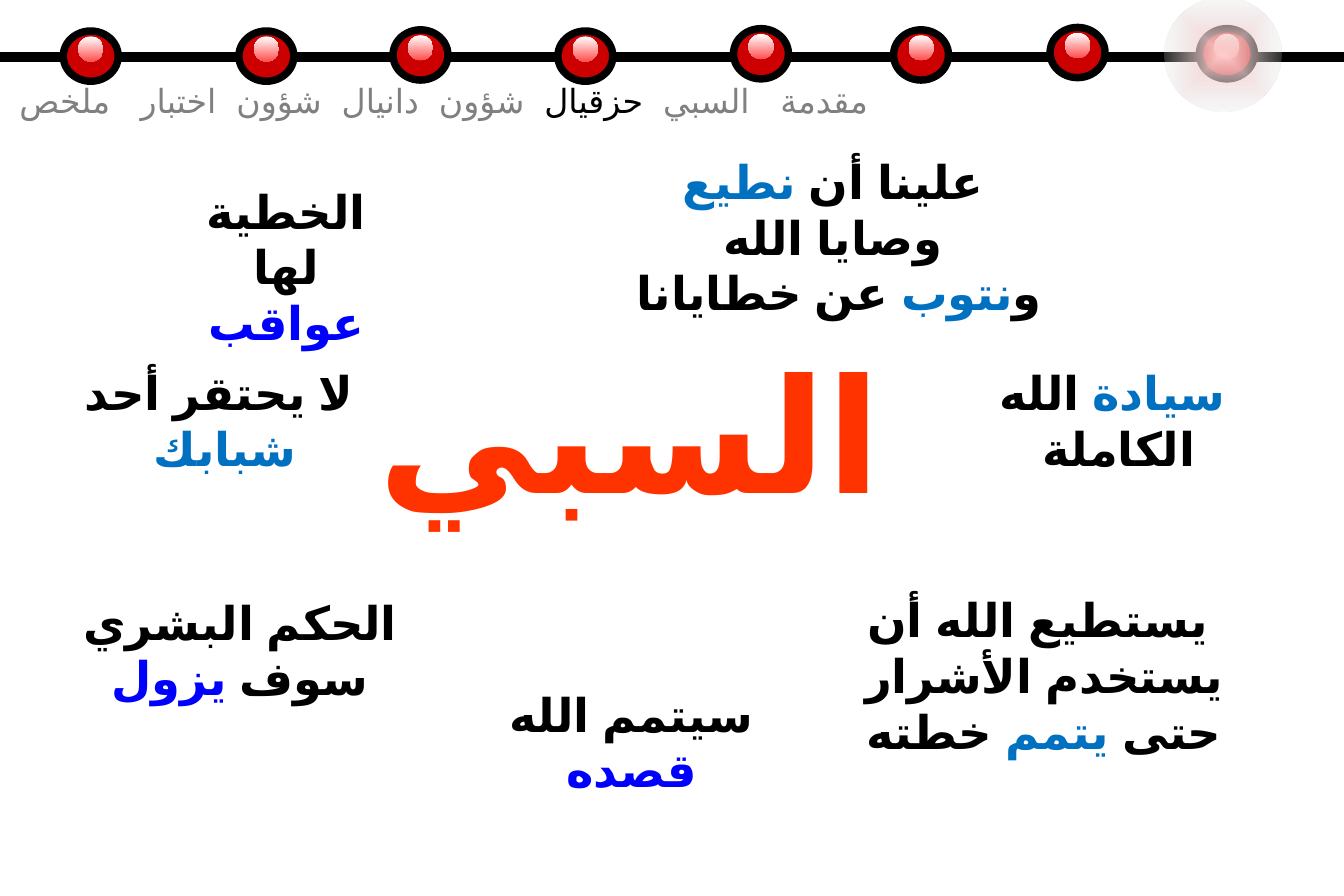
from lxml.etree import SubElement
from pptx import Presentation
from pptx.dml.color import RGBColor
from pptx.enum.lang import MSO_LANGUAGE_ID
from pptx.enum.shapes import MSO_CONNECTOR, MSO_SHAPE
from pptx.enum.text import MSO_ANCHOR, MSO_AUTO_SIZE, PP_ALIGN
from pptx.oxml import parse_xml
from pptx.oxml.ns import nsdecls, qn
from pptx.util import Inches, Pt

BLACK, GREY, RED, BLUE, SKY = "000000", "808080", "FF3300", "0000FF", "0070C0"
HALO_FILL = f"""<a:gradFill {nsdecls("a")} rotWithShape="1"><a:gsLst>
<a:gs pos="0"><a:srgbClr val="FFCCCC"/></a:gs>
<a:gs pos="100000"><a:srgbClr val="DDDDDD"><a:alpha val="20000"/></a:srgbClr></a:gs>
</a:gsLst><a:path path="shape">
<a:fillToRect l="50000" t="50000" r="50000" b="50000"/></a:path></a:gradFill>"""


def color(hex_string):
    return RGBColor.from_string(hex_string)


class SlideBuilder:
    """Places elements on a grid of 45 columns by 30 rows."""

    font_name = "Arial"
    language = MSO_LANGUAGE_ID.ARABIC
    cell = Inches(0.25)

    def __init__(self, slide):
        self.slide = slide

    def grid(self, *values):
        return [round(value * self.cell) for value in values]

    def line(self, start, end, width):
        connector = self.slide.shapes.add_connector(
            MSO_CONNECTOR.STRAIGHT, *self.grid(*start, *end))
        connector.line.color.rgb = color(BLACK)
        connector.line.width = Pt(width)
        SubElement(connector._element.spPr, qn("a:effectLst"))

    def ellipse(self, shapes, *box):
        shape = shapes.add_shape(MSO_SHAPE.OVAL, *self.grid(*box))
        shape.shadow.inherit = False
        shape.line.fill.background()
        return shape

    def bead(self, left, top):
        shapes = self.slide.shapes.add_group_shape().shapes
        ball = self.ellipse(shapes, left, top, 1.84, 1.68)
        ball.fill.solid()
        ball.fill.fore_color.rgb = color("CC0000")
        ball.line.color.rgb = color(BLACK)
        ball.line.width = Pt(4.5)
        gloss = self.ellipse(shapes, left + 0.5, top + 0.18, 0.84, 0.84)
        gloss.fill.gradient()
        gloss.fill.gradient_angle = 270
        for stop, shade in zip(gloss.fill.gradient_stops, ("FFFFFF", "FF5050")):
            stop.color.rgb = color(shade)

    def halo(self, *box):
        shape = self.ellipse(self.slide.shapes, *box)
        shape.fill.background()
        properties = shape._element.spPr
        properties.replace(properties.find(qn("a:noFill")), parse_xml(HALO_FILL))

    def text(self, box, lines, size=28, bold=True, align=PP_ALIGN.CENTER, shape=None):
        """Each line is a list of (text, colour) runs."""
        left, top, width, height = self.grid(*box)
        if shape is None:
            shape = self.slide.shapes.add_textbox(left, top, width, height)
        shape.left, shape.top, shape.width, shape.height = left, top, width, height
        frame = shape.text_frame
        frame.word_wrap = True
        frame.auto_size = MSO_AUTO_SIZE.SHAPE_TO_FIT_TEXT
        frame.vertical_anchor = MSO_ANCHOR.TOP
        for index, runs in enumerate(lines):
            paragraph = frame.add_paragraph() if index else frame.paragraphs[0]
            paragraph.alignment = align
            font = paragraph.font
            font.size, font.bold, font.name = Pt(size), bold, self.font_name
            defaults = paragraph._p.pPr.find(qn("a:defRPr"))
            SubElement(defaults, qn("a:cs")).set("typeface", self.font_name)
            for words, shade in runs:
                run = paragraph.add_run()
                run.text = words
                run.font.language_id = self.language
                run.font.color.rgb = color(shade)
        return shape

    def title(self, box, words, shade, size):
        self.text(box, [[(words, shade)]], size, shape=self.slide.shapes.title)

    def navigation(self, box, labels, current):
        """Labels in one line; letter spacing widens the space between them."""
        runs = []
        for index, (label, gap) in enumerate(labels):
            runs.append((label, BLACK if index == current else GREY))
            if gap:
                runs.append((" ", GREY))
        shape = self.text(box, [runs], 20, False, PP_ALIGN.LEFT)
        shape.text_frame.margin_left = Inches(0.16)
        spaces = [run for run in shape.text_frame.paragraphs[0].runs if run.text == " "]
        for run, (_, gap) in zip(spaces, labels):
            run.font._element.set("spc", str(gap))


def main():
    presentation = Presentation()
    presentation.slide_width, presentation.slide_height = Inches(11.25), Inches(7.5)
    builder = SlideBuilder(presentation.slides.add_slide(presentation.slide_layouts[5]))

    # Timeline
    builder.line((-0.96, 1.92), (46.28, 1.92), 6)
    beads = [(2.12, 1.04), (8, 1.04), (13.16, 1), (18.68, 1.04),
             (24.56, 0.96), (29.92, 1), (35.16, 0.92), (40.16, 0.96)]
    for left, top in beads:
        builder.bead(left, top)
    builder.halo(39, -0.08, 3.92, 3.8)

    # Section names, each with the extra gap after it
    double, triple = 640, 1280
    sections = [("مقدمة", triple), ("السبي", double), ("حزقيال", double),
                ("شؤون", double), ("دانيال", double), ("شؤون", double),
                ("اختبار", triple), ("ملخص", 0)]
    builder.navigation((0, 2.48, 45, 1.8), sections, current=2)

    # Lessons around the title
    lessons = [
        ((6.52, 5.92, 6.12, 4.16), [[("الخطية لها", BLACK)], [("عواقب", BLUE)]]),
        ((17.16, 4.92, 21.88, 6.04), [
            [("علينا أن ", BLACK), ("نطيع ", SKY)],
            [("وصايا الله ", BLACK)],
            [("و", BLACK), ("نتوب", SKY), (" عن خطايانا", BLACK)]]),
        ((29.92, 12, 15.08, 4.16), [
            [("سيادة ", SKY), ("الله ", BLACK)], [("الكاملة", BLACK)]]),
        ((26.32, 19.6, 17.28, 6.04), [
            [("يستطيع الله أن ", BLACK)],
            [("يستخدم الأشرار", BLACK)],
            [("حتى ", BLACK), ("يتمم", SKY), (" خطته", BLACK)]]),
        ((15.04, 22.76, 12.2, 4.16), [[("سيتمم الله", BLACK)], [("قصده", BLUE)]]),
        ((1.88, 19.68, 12.32, 4.16), [
            [("الحكم البشري", BLACK)], [("سوف ", BLACK), ("يزول", BLUE)]]),
        ((0, 12, 15.08, 4.16), [[("لا يحتقر أحد ", BLACK)], [("شبابك", SKY)]]),
    ]
    for box, lines in lessons:
        builder.text(box, lines)

    # Title
    builder.title((11.72, 11, 18.72, 6.88), "السبي", RED, 96)

    presentation.save("out.pptx")


if __name__ == "__main__":
    main()
